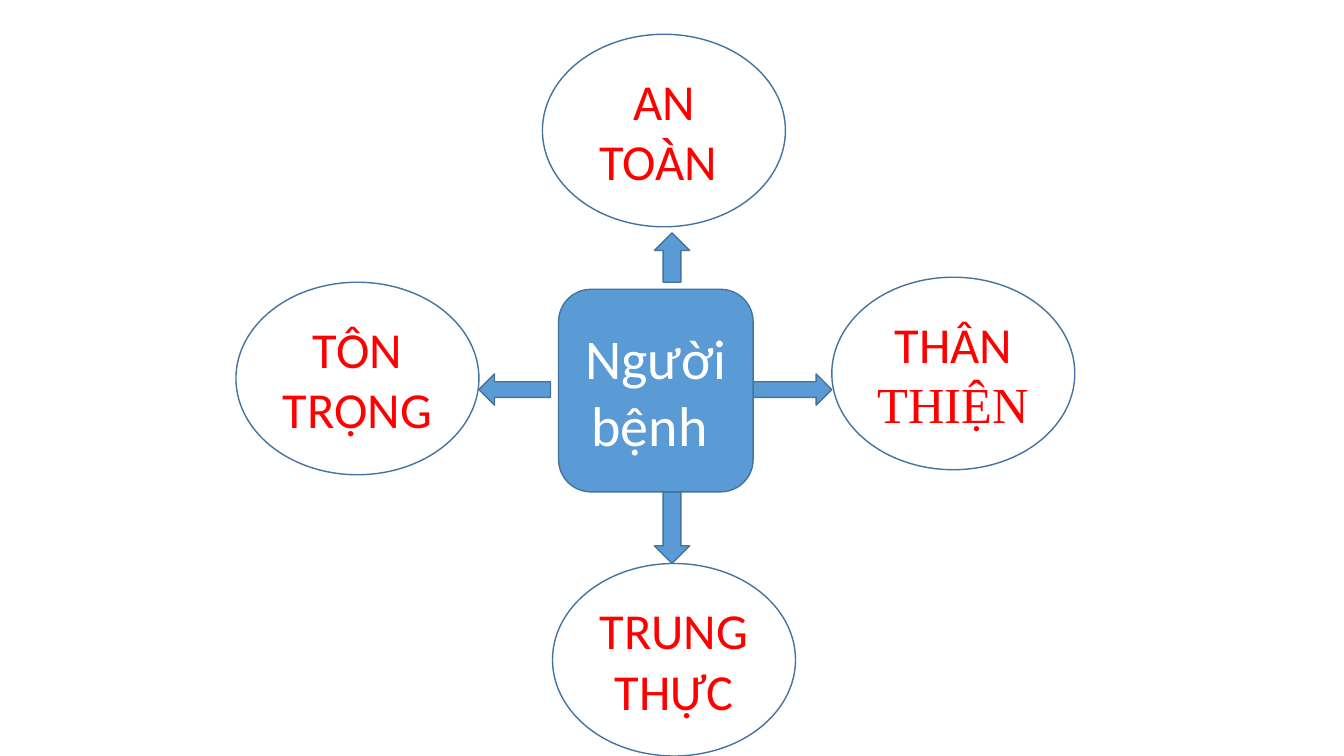
from pptx import Presentation
from pptx.dml.color import RGBColor
from pptx.enum import shapes, text
from pptx.util import Inches, Pt

BLUE, OUTLINE, WHITE, RED = "5B9BD5", "43739E", "FFFFFF", "FF0000"
SANS, SERIF = "Calibri", "Times New Roman"
KIND = shapes.MSO_SHAPE

# left, top, then text pieces with their fonts
VALUE_SIZE = (2.41, 1.91)
VALUES = [
    (2.34, 2.8, [("TÔN TRỌNG ", SANS)]),
    (5.48, 5.59, [("TRUNG THỰC", SANS)]),
    (8.25, 2.75, [("THÂN ", SANS), ("THIỆN", SERIF)]),
    (5.38, 0.34, [("AN TOÀN ", SANS)]),
]
PATIENT_BOX = (5.54, 2.87, 1.93, 2.01)
PATIENT = [("Người bệnh ", SANS)]

# Arrows share one row and one column; each has its own start and length
ROW_TOP, COLUMN_LEFT = 3.71, 6.49
ROW_HEIGHT, COLUMN_WIDTH = 0.31, 0.35
ACROSS = [(KIND.RIGHT_ARROW, 7.47, 0.78), (KIND.LEFT_ARROW, 4.75, 0.71)]
UPRIGHT = [(KIND.DOWN_ARROW, 4.88, 0.71), (KIND.UP_ARROW, 2.31, 0.49)]


def color(hex_value):
    return RGBColor.from_string(hex_value)


def add_shape(s, kind, box, fill):
    sp = s.shapes.add_shape(kind, *map(Inches, box))
    sp.shadow.inherit = False
    sp.fill.solid()
    sp.fill.fore_color.rgb = color(fill)
    sp.line.color.rgb = color(OUTLINE)
    sp.line.width = Pt(1)
    return sp


def write(sp, pieces, *, size, ink):
    tf = sp.text_frame
    tf.word_wrap = True
    tf.vertical_anchor = text.MSO_ANCHOR.MIDDLE
    p = tf.paragraphs[0]
    p.alignment = text.PP_ALIGN.CENTER
    for words, font in pieces:
        r = p.add_run()
        r.text = words
        r.font.name = font
        r.font.size = Pt(size)
        r.font.color.rgb = color(ink)


def main():
    prs = Presentation()
    prs.slide_width, prs.slide_height = Inches(13.33), Inches(7.5)
    s = prs.slides.add_slide(prs.slide_layouts[6])

    for left, top, pieces in VALUES:
        sp = add_shape(s, KIND.OVAL, (left, top, *VALUE_SIZE), WHITE)
        write(sp, pieces, size=36, ink=RED)

    for kind, left, length in ACROSS:
        add_shape(s, kind, (left, ROW_TOP, length, ROW_HEIGHT), BLUE)
    for kind, top, length in UPRIGHT:
        add_shape(s, kind, (COLUMN_LEFT, top, COLUMN_WIDTH, length), BLUE)

    sp = add_shape(s, KIND.ROUNDED_RECTANGLE, PATIENT_BOX, BLUE)
    write(sp, PATIENT, size=40, ink=WHITE)

    prs.save("out.pptx")


if __name__ == "__main__":
    main()
